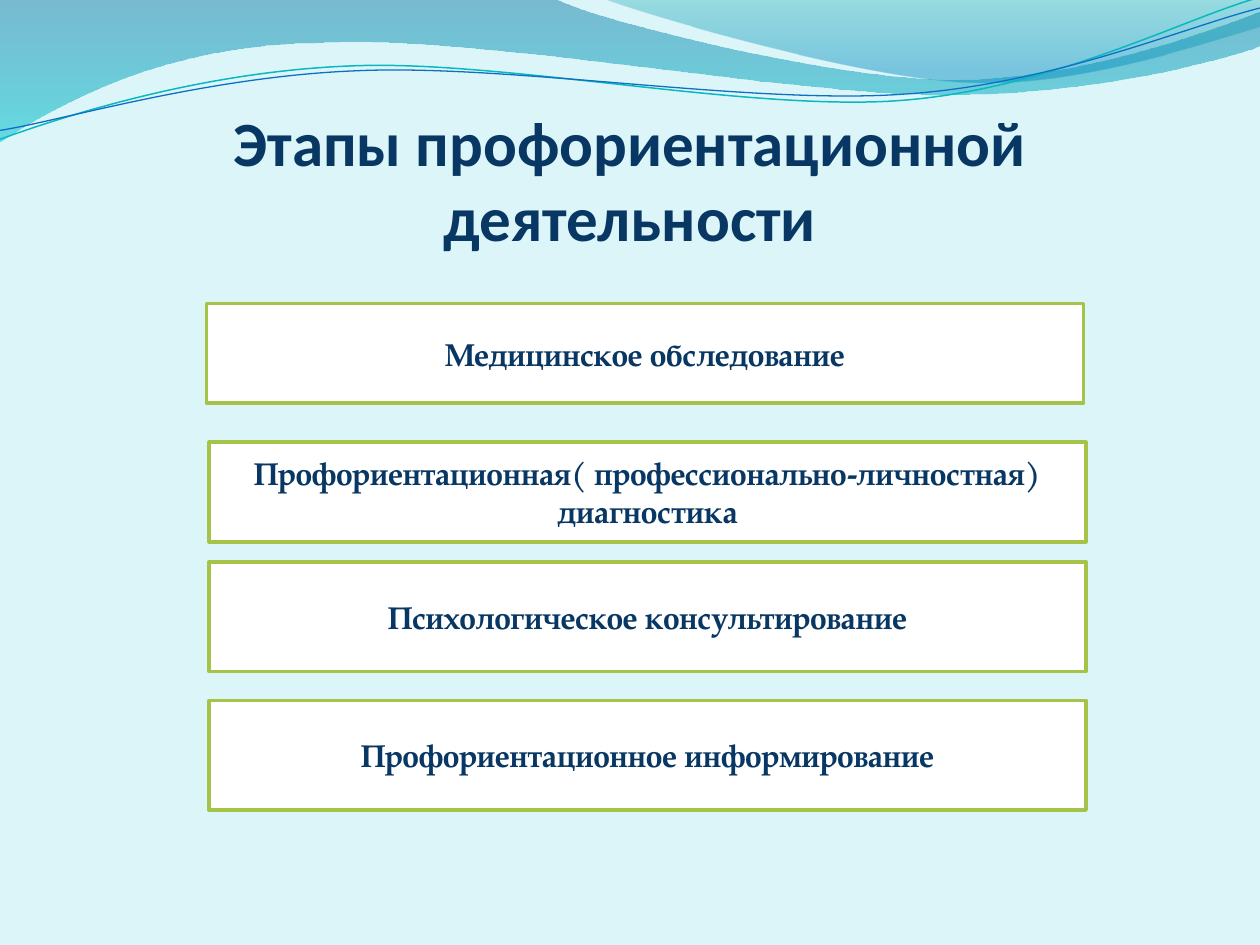
from lxml import etree
from pptx import Presentation
from pptx.dml.color import RGBColor
from pptx.enum.shapes import MSO_SHAPE
from pptx.enum.text import MSO_ANCHOR, MSO_AUTO_SIZE, PP_ALIGN
from pptx.oxml.ns import qn
from pptx.util import Inches, Pt

RECTANGLE = MSO_SHAPE.RECTANGLE
BOTTOM, MIDDLE = MSO_ANCHOR.BOTTOM, MSO_ANCHOR.MIDDLE
CENTER = PP_ALIGN.CENTER
NO_AUTOFIT = MSO_AUTO_SIZE.NONE

COLORS = {
    "background": "DBF5F9", "text": "083763", "box": "FFFFFF", "border": "A5C249",
    "deep": "0074A1", "cyan": "00C6CF", "teal": "00A1A9", "blue": "008BBF",
    "teal line": "0AB8BF", "blue line": "0F6FC6",
}
RGB = {name: RGBColor.from_string(value) for name, value in COLORS.items()}

# Each outline is a start point, then lines (x, y) and Bezier curves (six numbers).
# Gradient stops are position, colour, opacity in percent.
WAVES = [
    ([(0, -0.01), (4.4, -0.01), (4.76, 0.17, 6.64, 0.63, 7.58, 0.63),
      (8.53, 0.63, 9.58, 0.26, 10, 0.09), (10.01, 0.36),
      (9.83, 0.44, 8.7, 0.76, 7.46, 0.75), (6.22, 0.75, 3.82, 0.28, 2.57, 0.34),
      (1.29, 0.35, 0.46, 0.83, -0.01, 1.13), (0, -0.01)],
     [(0, "deep", 45), (1, "cyan", 55)]),
    ([(4.79, -0.01), (5.09, 0.11, 6.82, 0.62, 7.69, 0.65),
      (8.56, 0.69, 9.61, 0.32, 10, 0.21), (10, 0), (4.79, -0.01)],
     [(0, "teal", 30), (0.8, "blue", 45)]),
]
WAVE_LINES = [
    ([(-0.02, 0.87), (0.47, 0.72, 1.58, 0.41, 2.78, 0.42),
      (3.96, 0.42, 5.91, 0.93, 7.12, 0.9), (8.32, 0.87, 9.4, 0.36, 10, 0.22)],
     "teal line", 0.85),
    ([(-0.02, 0.8), (0.46, 0.75, 1.64, 0.45, 2.83, 0.46),
      (4.03, 0.46, 5.96, 0.88, 7.16, 0.85), (8.35, 0.83, 9.42, 0.42, 10.02, 0.3)],
     "blue line", 0.75),
]
WAVE_LINE_ROTATION = 357.3
STAGES = [
    ("Медицинское обследование", 1.64, 2.41, 0.79),
    ("Профориентационная( профессионально-личностная) диагностика", 1.66, 3.51, 0.79),
    ("Профориентационное информирование", 1.66, 5.56, 0.87),
    ("Психологическое консультирование", 1.66, 4.46, 0.87),
]


def add_outline(outline, close):
    """Draw through all points, then join each curve's three lines into one Bezier."""
    points = [(Inches(segment[i]), Inches(segment[i + 1]))
              for segment in outline for i in range(0, len(segment), 2)]
    builder = slide.shapes.build_freeform(*points[0], scale=1.0)
    builder.add_line_segments(points[1:], close=close)
    shape = builder.convert_to_shape()
    shape.shadow.inherit = False
    lines = iter(list(shape.element.iter(qn("a:lnTo"))))
    for segment in outline[1:]:
        line = next(lines)
        if len(segment) == 6:
            line.addprevious(curve := etree.Element(qn("a:cubicBezTo")))
            for part in (line, next(lines), next(lines)):
                curve.append(part[0])
                part.getparent().remove(part)
    return shape


def write_text(shape, text, frame_format, font_format):
    frame = shape.text_frame
    frame.text = text
    for name, value in frame_format.items():
        setattr(frame, name, value)
    paragraph = frame.paragraphs[0]
    paragraph.alignment = CENTER
    for name, value in font_format.items():
        setattr(paragraph.runs[0].font, name, value)
    paragraph.runs[0].font.color.rgb = RGB["text"]


prs = Presentation()
prs.slide_width, prs.slide_height = Inches(10), Inches(7.5)
slide = prs.slides.add_slide(prs.slide_layouts[5])
slide.background.fill.solid()
slide.background.fill.fore_color.rgb = RGB["background"]

for outline, stops in WAVES:
    wave = add_outline(outline, close=True)
    wave.line.fill.background()
    wave.fill.gradient()
    wave.fill.gradient_angle = 270
    for stop, (position, color, _) in zip(wave.fill.gradient_stops, stops):
        stop.position = position
        stop.color.rgb = RGB[color]
    for node, (_, _, opacity) in zip(wave.element.iter(qn("a:gs")), stops):
        etree.SubElement(node[0], qn("a:alpha"), val=str(opacity * 1000))

for outline, color, width in WAVE_LINES:
    wave_line = add_outline(outline, close=False)
    wave_line.rotation = WAVE_LINE_ROTATION
    wave_line.fill.background()
    wave_line.line.color.rgb = RGB[color]
    wave_line.line.width = Pt(width)

title = slide.shapes.title
title.element.getparent().append(title.element)  # in front of the waves
title.left, title.top = Inches(0.5), Inches(0.77)
title.width, title.height = Inches(9), Inches(1.25)
write_text(title, "Этапы профориентационной деятельности",
           {"vertical_anchor": BOTTOM, "auto_size": NO_AUTOFIT, "word_wrap": True,
            "margin_left": 0, "margin_top": Inches(0.05),
            "margin_right": 0, "margin_bottom": 0},
           {"name": "Calibri", "size": Pt(36), "bold": True})

for text, left, top, height in STAGES:
    stage = slide.shapes.add_shape(
        RECTANGLE, Inches(left), Inches(top), Inches(6.96), Inches(height))
    stage.shadow.inherit = False
    stage.fill.solid()
    stage.fill.fore_color.rgb = RGB["box"]
    stage.line.color.rgb = RGB["border"]
    stage.line.width = Pt(2)
    write_text(stage, text, {"vertical_anchor": MIDDLE, "word_wrap": True},
               {"name": "TeX Gyre Pagella", "size": Pt(18), "bold": True})

prs.save("out.pptx")
